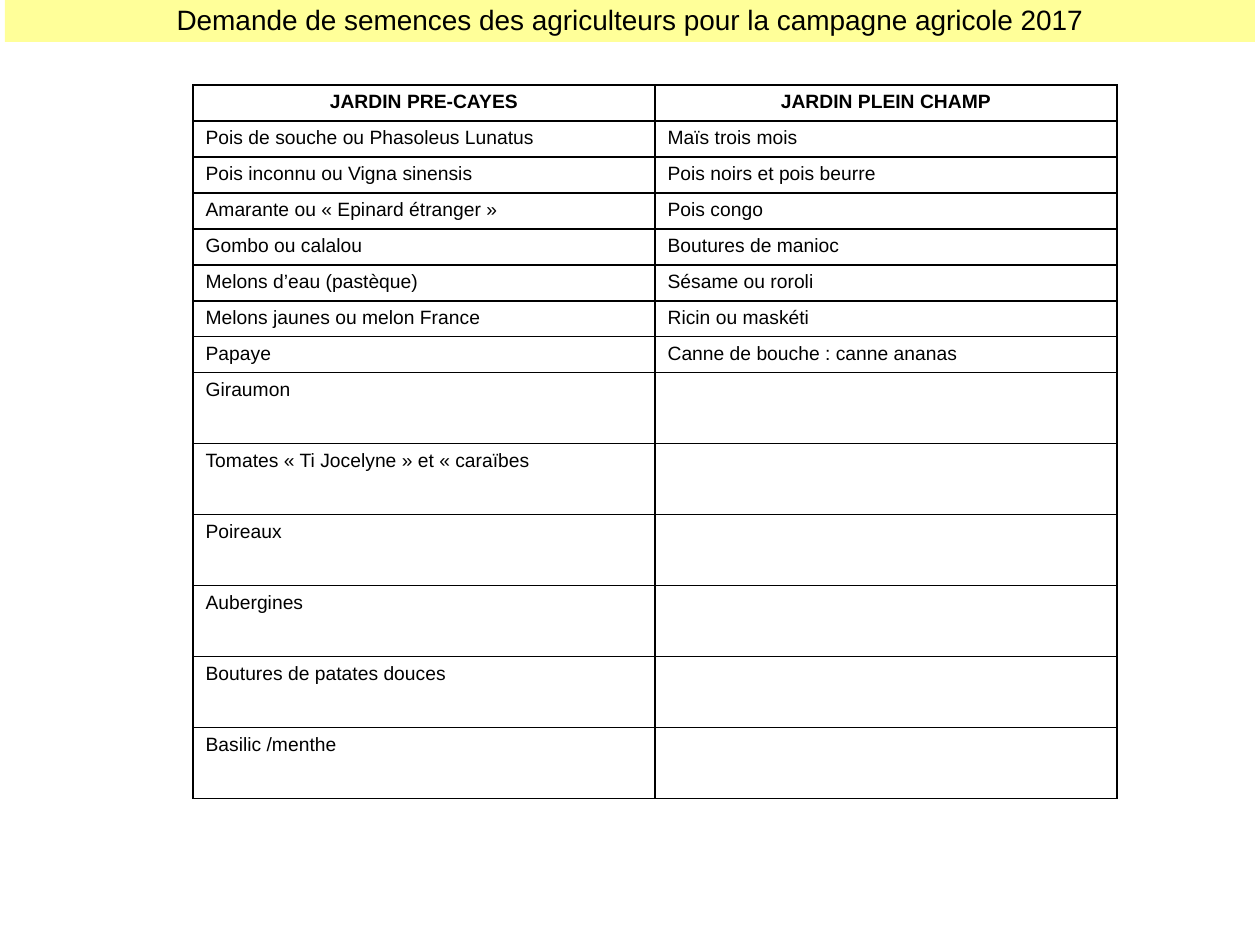
from lxml import etree
from pptx import Presentation, util as u
from pptx.dml.color import RGBColor
from pptx.enum import shapes, text
from pptx.oxml import ns

PX = 914400 // 126
COLORS = {"banner": "FFFF99", "ink": "000000", "paper": "FFFFFF"}
HEADERS = ["JARDIN PRE-CAYES", "JARDIN PLEIN CHAMP"]
PRE_CAYES = [
    "Pois de souche ou Phasoleus Lunatus", "Pois inconnu ou Vigna sinensis",
    "Amarante ou « Epinard étranger »", "Gombo ou calalou",
    "Melons d’eau (pastèque)", "Melons jaunes ou melon France", "Papaye",
    "Giraumon", "Tomates « Ti Jocelyne » et « caraïbes", "Poireaux",
    "Aubergines", "Boutures de patates douces", "Basilic /menthe",
]
PLEIN_CHAMP = [
    "Maïs trois mois", "Pois noirs et pois beurre", "Pois congo",
    "Boutures de manioc", "Sésame ou roroli", "Ricin ou maskéti",
    "Canne de bouche : canne ananas",
]


def add_text(paragraph, words, size, alignment, bold=False):
    paragraph.alignment = alignment
    run = paragraph.add_run()
    run.text = words
    run.font.name = "Arial"
    run.font.size = u.Pt(size)
    run.font.bold = bold
    run.font.color.rgb = RGBColor.from_string(COLORS["ink"])


def add_borders(cell):
    properties = cell._tc.get_or_add_tcPr()
    for position, side in enumerate(("lnL", "lnR", "lnT", "lnB")):
        line = etree.Element(ns.qn("a:" + side), w=str(u.Pt(1)))
        fill = etree.SubElement(line, ns.qn("a:solidFill"))
        etree.SubElement(fill, ns.qn("a:srgbClr"), val=COLORS["ink"])
        properties.insert(position, line)


presentation = Presentation()
presentation.slide_width = u.Inches(10)
presentation.slide_height = u.Inches(7.5)
slide = presentation.slides.add_slide(presentation.slide_layouts[6])

# Title banner
banner = slide.shapes.add_shape(
    shapes.MSO_SHAPE.RECTANGLE, 5 * PX, -4 * PX, 1250 * PX, 46 * PX)
banner.shadow.inherit = False
banner.fill.solid()
banner.fill.fore_color.rgb = RGBColor.from_string(COLORS["banner"])
banner.line.fill.background()
banner.text_frame.word_wrap = True
banner.text_frame.vertical_anchor = text.MSO_ANCHOR.MIDDLE
add_text(banner.text_frame.paragraphs[0],
         "Demande de semences des agriculteurs pour la campagne agricole 2017",
         16, text.PP_ALIGN.CENTER)

# Seed table: rows with an entry in both columns are short, the others tall
row_count = 1 + len(PRE_CAYES)
heights = [36 if row <= len(PLEIN_CHAMP) else 71 for row in range(row_count)]
table = slide.shapes.add_table(
    row_count, 2, 193 * PX, 85 * PX, 924 * PX, sum(heights) * PX).table
for row, height in enumerate(heights):
    table.rows[row].height = height * PX

for column, entries in enumerate((PRE_CAYES, PLEIN_CHAMP)):
    table.columns[column].width = 462 * PX
    words = [HEADERS[column]] + entries
    for row in range(row_count):
        cell = table.cell(row, column)
        cell.fill.solid()
        cell.fill.fore_color.rgb = RGBColor.from_string(COLORS["paper"])
        add_borders(cell)
        if row < len(words):
            header = row == 0
            alignment = text.PP_ALIGN.CENTER if header else text.PP_ALIGN.JUSTIFY
            add_text(cell.text_frame.paragraphs[0], words[row], 11,
                     alignment, bold=header)

presentation.save("out.pptx")
